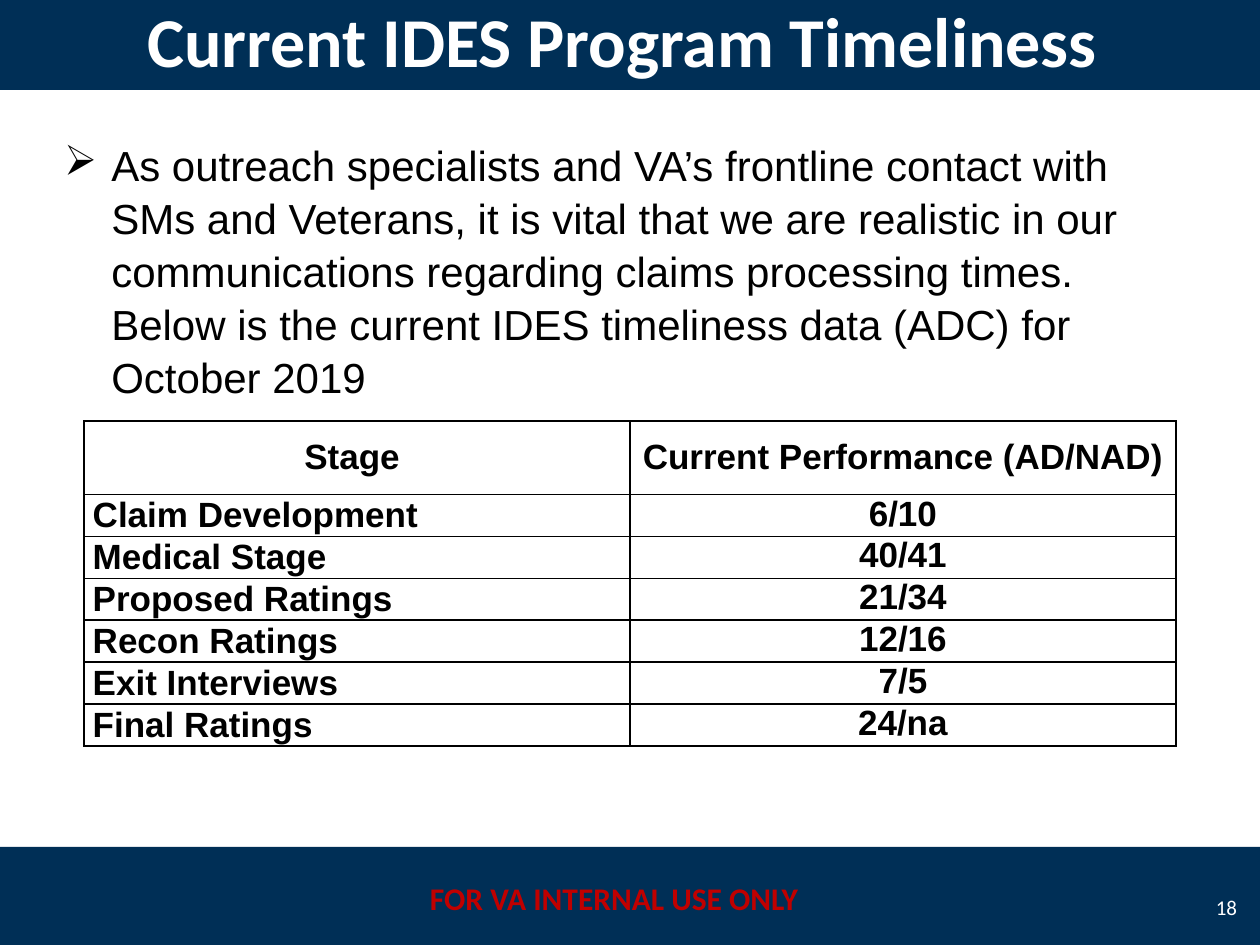
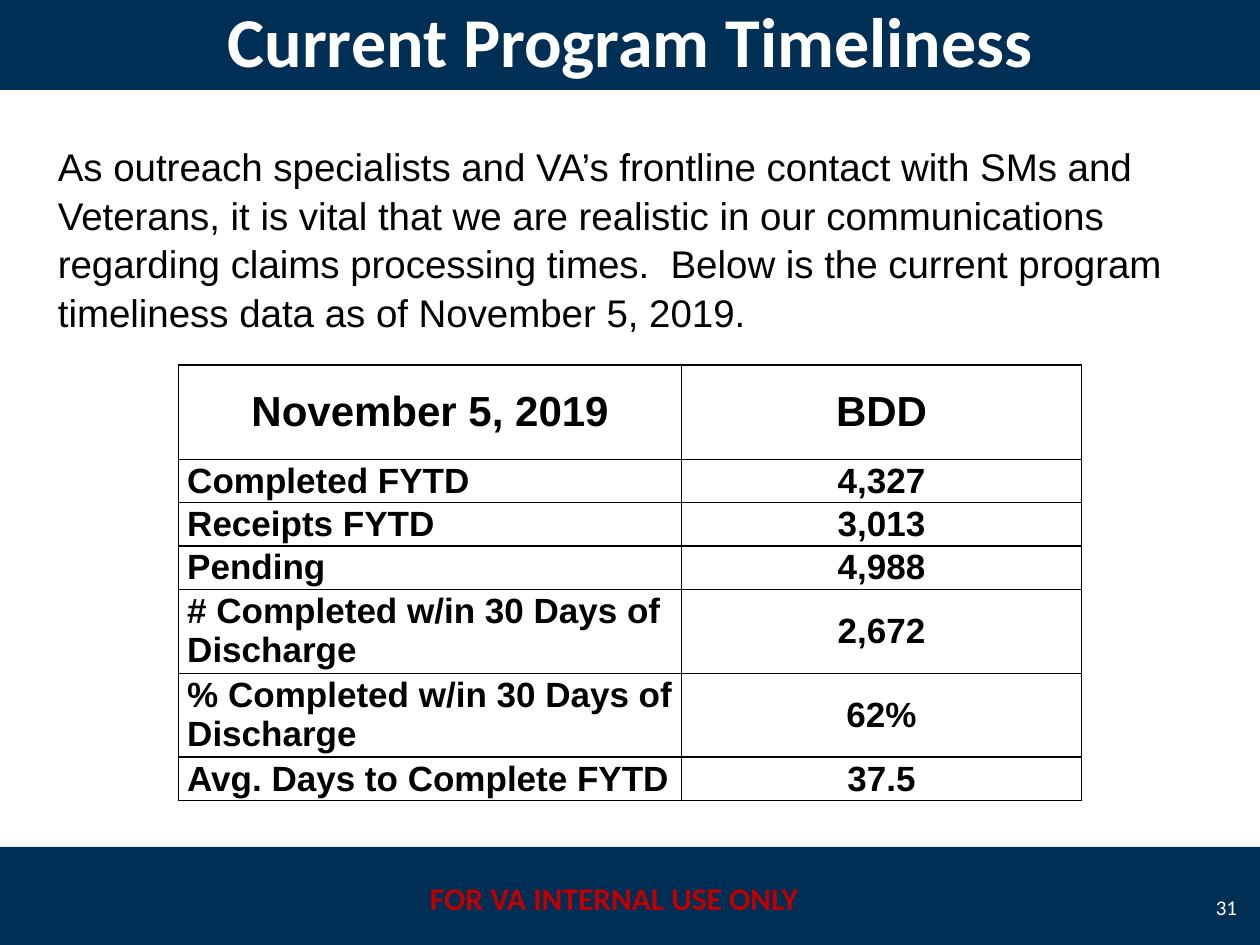
from dataclasses import dataclass

from lxml.etree import SubElement
from pptx import Presentation
from pptx.dml.color import RGBColor
from pptx.enum.shapes import MSO_SHAPE
from pptx.enum.text import MSO_ANCHOR, MSO_AUTO_SIZE, PP_ALIGN
from pptx.oxml.ns import qn
from pptx.util import Pt

LEFT, MID, RIGHT = PP_ALIGN.LEFT, PP_ALIGN.CENTER, PP_ALIGN.RIGHT
TOP, CENTER = MSO_ANCHOR.TOP, MSO_ANCHOR.MIDDLE


@dataclass(frozen=True)
class Theme:
    navy: str = "002F56"
    white: str = "FFFFFF"
    black: str = "000000"
    red: str = "C00000"
    head: str = "Calibri"
    body: str = "Arial"
    title: int = 40
    large: int = 24
    text: int = 22
    cell: int = 20
    notice: int = 18
    small: int = 12
    wide: float = 720
    high: float = 540
    band: tuple = (0, -6, 720, 57.5)
    base: tuple = (0, 484, 720, 57.5)


def points(box):
    return [Pt(n) for n in box]


def assign(item, **values):
    for name, value in values.items():
        setattr(item, name, value)


class Deck:
    def __init__(self, theme):
        self.theme = theme
        self.file = Presentation()
        assign(self.file, slide_width=Pt(theme.wide), slide_height=Pt(theme.high))
        self.slide = None

    def start(self, title, number):
        """Add a slide with its bands, title, notice and page number."""
        t = self.theme
        self.slide = self.file.slides.add_slide(self.file.slide_layouts[5])
        for box in (t.base, t.band):
            self.block(box)
        self.title(title)
        self.text((234, 499, 234, 29), ["FOR VA INTERNAL USE ONLY"], t.notice,
                  t.red, t.head, True, MID)
        self.text((684, 504, 30, 29), [number], t.small, t.white, t.head,
                  align=RIGHT, anchor=CENTER)

    def block(self, box):
        shape = self.slide.shapes.add_shape(MSO_SHAPE.RECTANGLE, *points(box))
        shape.shadow.inherit = False
        shape.fill.solid()
        shape.fill.fore_color.rgb = RGBColor.from_string(self.theme.navy)
        shape.line.fill.background()

    def title(self, text):
        t = self.theme
        shape = self.slide.shapes.title
        left, top, width, height = points(t.band)
        assign(shape, left=left, top=top, width=width, height=height)
        # Bring the title in front of its band
        self.slide.shapes._spTree.append(shape._element)
        self.fill(shape.text_frame, [text], t.title, t.white, t.head, True, MID, CENTER)

    def text(self, box, lines, size, color, font, bold=False, align=LEFT,
             anchor=TOP, space=1.0, bullet=None):
        shape = self.slide.shapes.add_textbox(*points(box))
        self.fill(shape.text_frame, lines, size, color, font, bold, align,
                  anchor, space, bullet)

    def fill(self, frame, lines, size, color, font, bold, align, anchor,
             space=1.0, bullet=None):
        assign(frame, word_wrap=True, auto_size=MSO_AUTO_SIZE.NONE,
               vertical_anchor=anchor)
        for i, line in enumerate(lines):
            para = frame.add_paragraph() if i else frame.paragraphs[0]
            if bullet:
                self.bullet(para, bullet)
            self.label(para, line, size, color, font, bold, align)
            para.line_spacing = space

    def bullet(self, para, mark):
        props = para._p.get_or_add_pPr()
        props.set("marL", str(Pt(27)))
        props.set("indent", str(Pt(-27)))
        SubElement(props, qn("a:buChar")).set("char", mark)

    def label(self, para, text, size, color, font, bold, align):
        para.alignment = align
        run = para.add_run()
        run.text = text
        assign(run.font, size=Pt(size), name=font, bold=bold)
        run.font.color.rgb = RGBColor.from_string(color)

    def table(self, spot, widths, heights, rows, top, anchor):
        """Draw a ruled table; top is the header size, anchor places the values."""
        t = self.theme
        box = (*spot, sum(widths), sum(heights))
        grid = self.slide.shapes.add_table(len(rows), len(widths), *points(box)).table
        assign(grid, first_row=False, horz_banding=False)
        for col, width in zip(grid.columns, widths):
            col.width = Pt(width)
        for r, (row, height) in enumerate(zip(rows, heights)):
            grid.rows[r].height = Pt(height)
            for c, text in enumerate(row):
                cell = grid.cell(r, c)
                assign(cell, margin_left=Pt(5), margin_right=Pt(5), margin_top=0,
                       margin_bottom=0,
                       vertical_anchor=anchor if r and c else CENTER)
                self.rule(cell)
                cell.fill.background()
                self.label(cell.text_frame.paragraphs[0], text,
                           t.cell if r else top, t.black, t.body, True,
                           LEFT if r and not c else MID)

    def rule(self, cell):
        props = cell._tc.get_or_add_tcPr()
        for side in "LRTB":
            line = SubElement(props, qn(f"a:ln{side}"), w=str(Pt(1)))
            paint = SubElement(line, qn("a:solidFill"))
            SubElement(paint, qn("a:srgbClr")).set("val", self.theme.black)


def stages(deck):
    t = deck.theme
    deck.start("Current IDES Program Timeliness ", "18")
    deck.text((29.5, 75, 660, 152.5), [
        "As outreach specialists and VA’s frontline contact with SMs and Veterans, "
        "it is vital that we are realistic in our communications regarding claims "
        "processing times.  Below is the current IDES timeliness data (ADC) for "
        "October 2019"], t.large, t.black, t.body, space=1.05, bullet="➢")
    rows = [
        ("Stage ", "Current Performance (AD/NAD)"),
        ("Claim Development", "6/10"),
        ("Medical Stage", "40/41"),
        ("Proposed Ratings", "21/34"),
        ("Recon Ratings", "12/16"),
        ("Exit Interviews", "7/5"),
        ("Final Ratings", "24/na"),
    ]
    deck.table((48, 240.5), [312] * 2, [42] + [24] * 6, rows, t.cell, TOP)


def claims(deck):
    t = deck.theme
    deck.start("Current Program Timeliness", "31")
    deck.text((26, 77, 684, 114), [
        "As outreach specialists and VA’s frontline contact with SMs and",
        "Veterans, it is vital that we are realistic in our communications "
        "regarding claims processing times.  Below is the current program "
        "timeliness data as of November 5, 2019."], t.text, t.black, t.body, space=1.05)
    rows = [
        ("November 5, 2019", "BDD"),
        ("Completed FYTD", "4,327"),
        ("Receipts FYTD", "3,013"),
        ("Pending", "4,988"),
        ("# Completed w/in 30 Days of Discharge", "2,672"),
        ("% Completed w/in 30 Days of Discharge", "62%"),
        ("Avg. Days to Complete FYTD", "37.5"),
    ]
    one, two = 24.75, 48
    deck.table((102, 208.5), [287.5, 228.5], [54, one, one, one, two, two, one],
               rows, t.large, CENTER)


def main():
    deck = Deck(Theme())
    stages(deck)
    claims(deck)
    deck.file.save("out.pptx")


if __name__ == "__main__":
    main()
